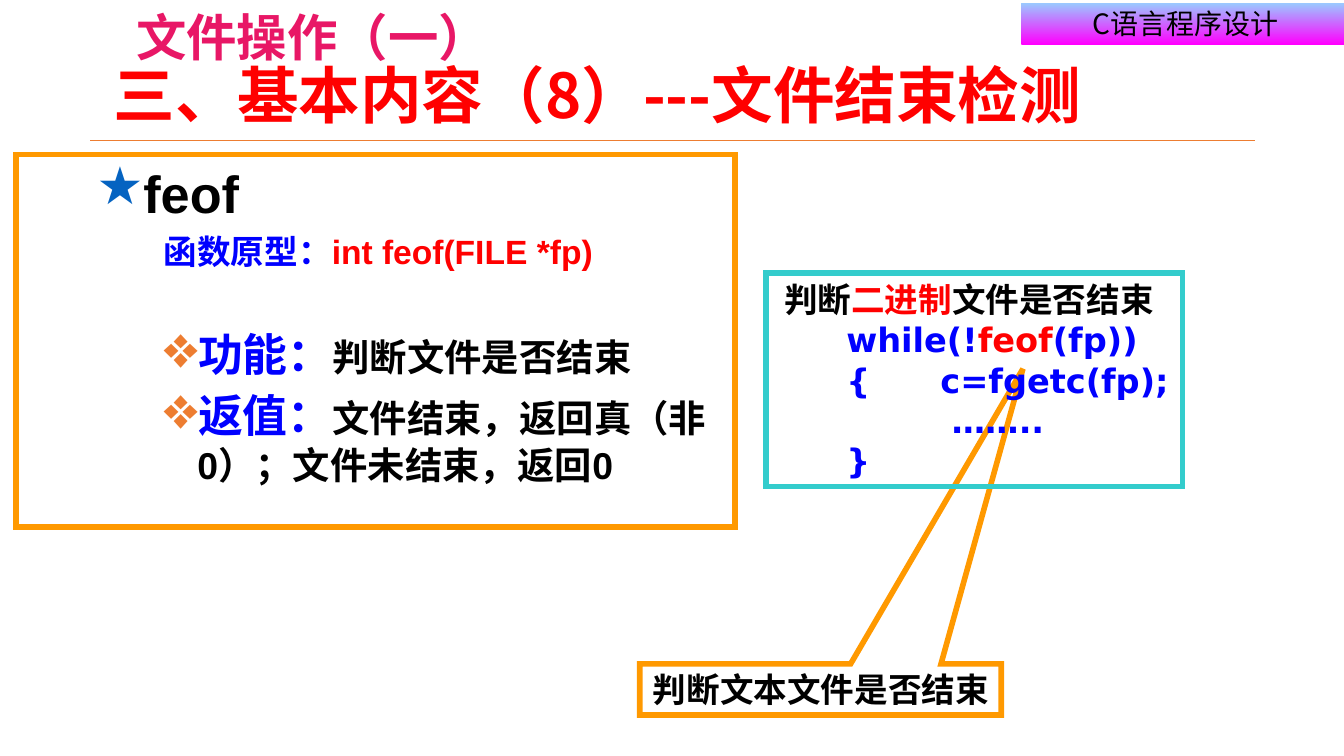
"""Build the slide on feof and detecting the end of a file."""
from dataclasses import dataclass
from typing import Optional

from lxml import etree
from pptx import Presentation
from pptx.dml.color import RGBColor
from pptx.enum import shapes, text
from pptx.oxml.ns import qn
from pptx.util import Inches, Pt

COLUMNS, ROWS = 100, 56.25
CELL = Inches(0.1)
BLACK, BLUE, RED, ORANGE = "000000", "0000FF", "FF0000", "FF9900"
NOTO = "Noto Sans CJK SC"
CENTER = text.PP_ALIGN.CENTER
MIDDLE, TOP = text.MSO_ANCHOR.MIDDLE, text.MSO_ANCHOR.TOP


@dataclass
class Span:
    """A stretch of text in one size and colour."""
    words: str
    size: float
    color: str = BLACK


@dataclass
class Line:
    """A paragraph with its bullet, indents in cells and spacing."""
    spans: list[Span]
    align: Optional[text.PP_ALIGN] = None
    margin: float = 0
    hanging: float = 0
    bullet: str = ""
    bullet_color: str = ""
    bullet_percent: int = 100
    before: float = 0
    spacing: float = 1.0


@dataclass
class Panel:
    """A text-bearing shape placed in grid columns and rows."""
    place: tuple[float, float, float, float]
    lines: list[Line]
    font: str
    bold: bool = True
    kind: shapes.MSO_SHAPE = shapes.MSO_SHAPE.RECTANGLE
    fill: str = ""
    border: str = ""
    anchor: text.MSO_ANCHOR = TOP
    wrap: bool = True
    insets: tuple[float, float, float, float] = (1, 0.5, 1, 0.5)


def cells(count: float) -> int:
    """Turn grid cells into a length."""
    return int(count * CELL)


def rgb(color: str) -> RGBColor:
    """Turn a hex string into a colour."""
    return RGBColor.from_string(color)


def add_bullet(paragraph, line: Line) -> None:
    """Set the indents and the bullet of a paragraph."""
    props = paragraph._p.get_or_add_pPr()
    props.set("marL", str(cells(line.margin)))
    props.set("indent", str(cells(-line.hanging)))
    if line.bullet:
        color = etree.SubElement(props, qn("a:buClr"))
        etree.SubElement(color, qn("a:srgbClr"), val=line.bullet_color)
        etree.SubElement(props, qn("a:buSzPct"), val=str(line.bullet_percent * 1000))
        etree.SubElement(props, qn("a:buChar"), char=line.bullet)


def write_line(paragraph, line: Line, panel: Panel) -> None:
    """Write one paragraph and format its runs."""
    add_bullet(paragraph, line)
    paragraph.alignment = line.align or text.PP_ALIGN.LEFT
    paragraph.space_before = Pt(line.before)
    paragraph.line_spacing = line.spacing
    for span in line.spans:
        run = paragraph.add_run()
        run.text = span.words
        run.font.size = Pt(span.size)
        run.font.bold = panel.bold
        run.font.name = panel.font
        run.font.color.rgb = rgb(span.color)
        east_asian = panel.font if panel.font.startswith("Noto") else NOTO
        etree.SubElement(run._r.get_or_add_rPr(), qn("a:ea"), typeface=east_asian)


def draw_panel(slide, panel: Panel):
    """Draw a panel with its text and return the shape."""
    shape = slide.shapes.add_shape(panel.kind, *map(cells, panel.place))
    shape.shadow.inherit = False
    if panel.fill:
        shape.fill.solid()
        shape.fill.fore_color.rgb = rgb(panel.fill)
    else:
        shape.fill.background()
    if panel.border:
        shape.line.color.rgb = rgb(panel.border)
        shape.line.width = Pt(3)
        etree.SubElement(shape.line._get_or_add_ln(), qn("a:miter"), lim="800000")
    else:
        shape.line.fill.background()
    frame = shape.text_frame
    frame.word_wrap = panel.wrap
    frame.vertical_anchor = panel.anchor
    (frame.margin_left, frame.margin_top,
     frame.margin_right, frame.margin_bottom) = map(cells, panel.insets)
    for index, line in enumerate(panel.lines):
        paragraph = frame.add_paragraph() if index else frame.paragraphs[0]
        write_line(paragraph, line, panel)
    return shape


def draw_rule(slide, left: float, right: float, row: float) -> None:
    """Draw the thin rule below the title."""
    rule = slide.shapes.add_connector(
        shapes.MSO_CONNECTOR.STRAIGHT, *map(cells, (left, row, right, row)))
    rule.line.color.rgb = rgb("ED7D31")
    rule.line.width = Pt(0.25)
    etree.SubElement(rule._element.spPr, qn("a:effectLst"))


def detail(label: str, words: str, before: float) -> Line:
    """Describe a bulleted property of the function."""
    return Line([Span(label, 24, BLUE), Span(words, 20)], margin=12.5, hanging=2.5,
                bullet="❖", bullet_color="ED7D31", bullet_percent=133, before=before)


def code(*spans: tuple[str, str]) -> Line:
    """Describe a line of code."""
    return Line([Span(words, 18, color) for words, color in spans])


def main() -> None:
    """Draw the slide and save it."""
    deck = Presentation()
    deck.slide_width, deck.slide_height = cells(COLUMNS), cells(ROWS)
    slide = deck.slides.add_slide(deck.slide_layouts[6])

    course = draw_panel(slide, Panel(
        (76, 0.2, 24.4, 3.1), [Line([Span("C语言程序设计", 15)], CENTER)],
        NOTO, bold=False, anchor=MIDDLE))
    course.fill.gradient()
    course.fill.gradient_angle = 270
    for stop, color in zip(course.fill.gradient_stops, ("99CCFF", "FF00FF")):
        stop.color.rgb = rgb(color)

    draw_panel(slide, Panel(
        (2, 0, 42.5, 3), [Line([Span("文件操作（一）", 27, "E81766")], CENTER)],
        "Noto Sans CJK JP", wrap=False))
    draw_rule(slide, 6.7, 93.4, 10.4)

    draw_panel(slide, Panel((1.2, 11.5, 53.5, 27.7), [
        Line([Span("feof", 28)], margin=8.1, hanging=3.1,
             bullet="★", bullet_color="0563C1"),
        Line([Span("函数原型：", 18, BLUE), Span("int feof(FILE *fp)", 18, RED)],
             margin=10, before=4),
        detail("功能：", "判断文件是否结束", 29.5),
        detail("返值：", "文件结束，返回真（非0）；文件未结束，返回0", 4),
    ], "Arial", border=ORANGE))

    tight = (0.75, 0.4, 0.7, 0.4)
    callout = draw_panel(slide, Panel(
        (47.6, 49.4, 26.9, 3.8), [Line([Span("判断文本文件是否结束", 18)], CENTER)],
        "DejaVu Sans", kind=shapes.MSO_SHAPE.RECTANGULAR_CALLOUT, fill="FFFFFF",
        border=ORANGE, anchor=MIDDLE, wrap=False, insets=tight))
    callout.adjustments[0], callout.adjustments[1] = 0.56, -6.28

    draw_panel(slide, Panel((57, 20.3, 31, 15.9), [
        Line([Span("判断", 18), Span("二进制", 18, RED), Span("文件是否结束", 18)],
             margin=0.6),
        code(("      while(!", BLUE), ("feof", RED), ("(fp))", BLUE)),
        code(("      {      c=fgetc(fp);", BLUE)),
        code(("               ……..", BLUE)),
        code(("      }", BLUE)),
    ], "DejaVu Sans", border="33CCCC", anchor=MIDDLE, insets=tight))

    draw_panel(slide, Panel(
        (7.5, 4.4, 84.3, 6.2),
        [Line([Span("三、基本内容（8）---文件结束检测", 33, RED)], spacing=0.9)], NOTO))
    deck.save("out.pptx")


if __name__ == "__main__":
    main()
